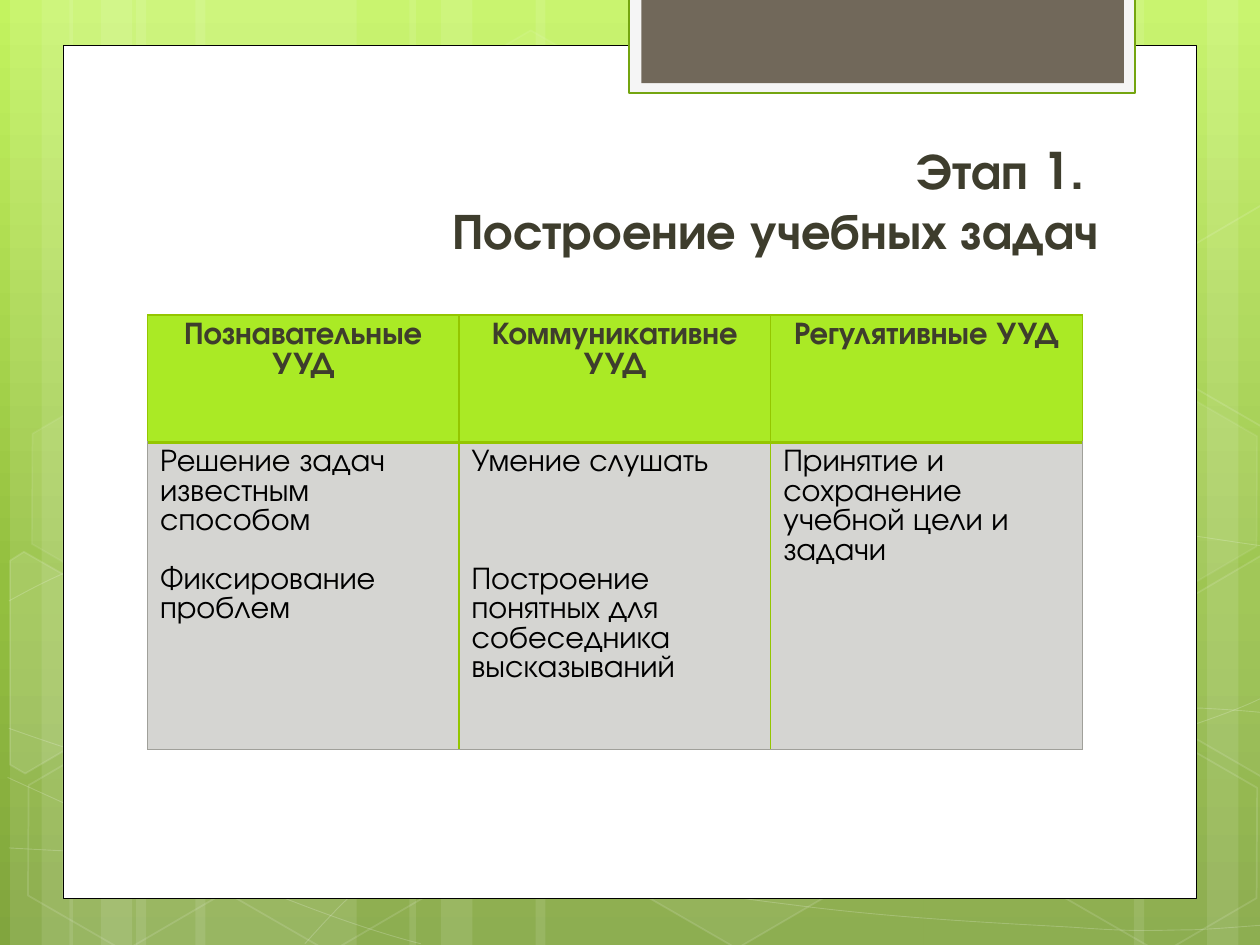
from copy import deepcopy

from lxml import etree
from pptx import Presentation
from pptx.dml.color import RGBColor
from pptx.enum.shapes import MSO_SHAPE
from pptx.enum.text import MSO_ANCHOR, MSO_AUTO_SIZE, PP_ALIGN
from pptx.oxml.ns import qn
from pptx.util import Inches, Pt

RECT, HEXAGON = MSO_SHAPE.RECTANGLE, MSO_SHAPE.HEXAGON
LEFT, CENTER, RIGHT = PP_ALIGN.LEFT, PP_ALIGN.CENTER, PP_ALIGN.RIGHT
FONT = "TeX Gyre Adventor"
WHITE, GREEN, GREY = "FFFFFF", "94C600", "A0A09A"
LINE_PITCH = 16.8

STRIPES = [(1.08, 1.75), (0.08, 0.5), (0.33, 0.83), (1.55, 1.75), (0.55, 0.5), (0.8, 0.83),
           (7.33, 1.75), (9.58, 0.5), (9, 0.83), (4.25, 3.08), (3.25, 0.5), (3.5, 0.83)]
WAVES = [
    [(0.07, 6.73), (0.61, 6.76), (1.15, 6.79), (1.9, 6.78), (2.65, 6.77), (3.58, 6.75),
     (4.58, 6.65), (5.58, 6.55), (7, 6.36), (7.92, 6.17), (8.83, 5.98), (9.77, 5.68),
     (10.07, 5.51)],
    [(0.07, 4.77), (0.36, 4.61), (0.65, 4.46), (1.21, 4.31), (1.78, 4.16), (2.59, 3.94),
     (3.47, 3.87), (4.36, 3.8), (5.44, 3.79), (6.54, 3.87), (7.64, 3.95), (9.47, 4.26),
     (10.07, 4.34)],
    [(0.06, 6.17), (1.27, 6.72), (2.47, 7.27), (3.34, 7.49)],
    [(0.07, 5.78), (0.38, 5.89), (0.7, 6), (1.28, 6.16), (1.86, 6.31), (2.73, 6.56),
     (3.57, 6.73), (4.4, 6.9), (5.45, 7.08), (6.28, 7.18), (7.11, 7.29), (8, 7.33),
     (8.53, 7.36), (9.05, 7.4), (9.19, 7.38), (9.45, 7.38), (9.71, 7.37), (9.89, 7.35),
     (10.07, 7.34)],
    [(2.42, 7.49), (2.6, 7.29), (2.78, 7.09), (3.02, 6.91), (3.26, 6.73), (3.6, 6.53),
     (3.88, 6.39), (4.16, 6.25), (4.33, 6.19), (4.7, 6.09), (5.06, 5.99), (5.73, 5.85),
     (6.08, 5.78), (6.44, 5.71), (6.49, 5.71), (6.8, 5.69), (7.11, 5.66), (7.6, 5.63),
     (7.94, 5.62), (8.29, 5.61), (8.86, 5.62), (8.86, 5.62), (9.08, 5.62), (9.31, 5.62),
     (9.53, 5.62), (9.71, 5.63), (9.88, 5.64), (10.06, 5.66)],
]
HEXAGONS = [(3.34, 0.36, 4, 8), (4.97, 5.89, 6, 12), (0.11, 5.91, 0, 12), (0.14, 3.12, 7, 8),
            (1.74, 5.92, 0, 12), (7.53, 4.53, 10, 12), (8.34, 5.93, 0, 12), (8.34, 3.14, 7, 8)]
CUT_HEXAGONS = [
    ([(0.08, 4.45), (0.19, 4.38), (0.96, 4.82), (0.95, 5.7), (0.2, 6.14), (0.08, 6.07)], 10),
    ([(9.26, 4.85), (10.01, 4.41), (10.09, 4.46), (10.09, 6.13), (10.02, 6.17), (9.26, 5.73)], 4),
    ([(9.26, 2.07), (10.01, 1.63), (10.1, 1.68), (10.09, 3.35), (10.02, 3.39), (9.26, 2.95)], 0),
]
HEADERS = ["Познавательные УУД", "Коммуникативне УУД", "Регулятивные УУД"]
SKILLS = [
    (["Решение задач известным способом", "Фиксирование проблем"], 1),
    (["Умение слушать", "Построение понятных для собеседника высказываний"], 3),
    (["Принятие и сохранение учебной цели и задачи"], 0),
]


def color(value):
    """Turn a hex string into a colour."""
    return RGBColor.from_string(value)


def paint(fill, value, opacity=100):
    """Give a fill a solid colour with an opacity in percent."""
    if not opacity:
        fill.background()
        return
    fill.solid()
    fill.fore_color.rgb = color(value)
    if opacity < 100:
        solid = fill._xPr.find(qn("a:solidFill"))
        etree.SubElement(solid[0], qn("a:alpha"), val=str(opacity * 1000))


def style(shape, fill, opacity=100, line=None, width=1, line_opacity=100):
    """Set the fill and outline of a shape and drop its shadow."""
    shape.shadow.inherit = False
    paint(shape.fill, fill, opacity)
    paint(shape.line.fill, line, line_opacity if line else 0)
    if line:
        shape.line.width = Pt(width)


def add_box(slide, kind, left, top, width, height):
    """Add a preset shape at a place in inches."""
    return slide.shapes.add_shape(kind, Inches(left), Inches(top), Inches(width), Inches(height))


def add_outline(slide, points, close):
    """Add a freeform through points in inches."""
    start, *rest = [(Inches(x), Inches(y)) for x, y in points]
    builder = slide.shapes.build_freeform(*start)
    builder.add_line_segments(rest, close=close)
    return builder.convert_to_shape()


def add_curve(slide, knots):
    """Add a chain of cubic curves, three knots to each after the start."""
    curve = add_outline(slide, knots, False)
    outline = next(curve._element.iter(qn("a:path")))
    lines = outline.findall(qn("a:lnTo"))
    for first in range(0, len(lines), 3):
        cubic = etree.SubElement(outline, qn("a:cubicBezTo"))
        for line in lines[first:first + 3]:
            cubic.append(line[0])
            outline.remove(line)
    return curve


def add_backdrop(slide):
    """Draw the green gradient with its stripes, waves and hexagons."""
    fill = slide.background.fill
    fill.gradient()
    fill.gradient_angle = 270
    stop_list = next(slide._element.iter(qn("a:gsLst")))
    stop_list.append(deepcopy(stop_list[-1]))
    for stop, position, value in zip(fill.gradient_stops, (0, 0.62, 1), ("C3F35F", "93BF3F", "81A53E")):
        stop.position = position
        stop.color.rgb = color(value)
    for left, width in STRIPES:
        style(add_box(slide, RECT, left, 0, width, 7.5), WHITE, 10)
    for knots in WAVES:
        style(add_curve(slide, knots), WHITE, 0, WHITE, 0.5, 20)
    for left, top, opacity, line_opacity in HEXAGONS:
        hexagon = add_box(slide, HEXAGON, left, top, 1.75, 1.52)
        hexagon.rotation = 30
        hexagon.adjustments[0] = 0.285
        style(hexagon, WHITE, opacity, WHITE, 1, line_opacity)
    for points, opacity in CUT_HEXAGONS:
        style(add_outline(slide, points, True), WHITE, opacity, WHITE, 1, 12)


def add_panel(slide):
    """Draw the white page and the tab at its top edge."""
    style(add_box(slide, RECT, 0.5, 0.36, 9, 6.77), WHITE, line="000000", width=0.5)
    style(add_box(slide, RECT, 4.99, -0.02, 4.02, 0.76), "F5F5F5", line="74A510", width=1.25)
    style(add_box(slide, RECT, 5.09, -0.02, 3.83, 0.68), "71685A")


def format_paragraph(paragraph, size, value, bold, align):
    """Set alignment and font of a paragraph."""
    paragraph.alignment = align
    font = paragraph.font
    font.name, font.size, font.bold = FONT, Pt(size), bold
    font.color.rgb = color(value)


def place_title(slide, left, top, width, height):
    """Put the title in its box, in front of the page."""
    title = slide.shapes.title
    slide.shapes._spTree.append(title._element)
    title.left, title.top, title.width, title.height = map(Inches, (left, top, width, height))
    frame = title.text_frame
    frame.text = "Этап 1. \vПостроение учебных задач"
    frame.auto_size = MSO_AUTO_SIZE.NONE
    frame.vertical_anchor = MSO_ANCHOR.BOTTOM
    format_paragraph(frame.paragraphs[0], 28.8, "3E3D2D", True, RIGHT)


def fill_cell(cell, texts, gap, value, bold, align):
    """Write paragraphs into a cell, a number of lines apart."""
    cell.text = "\n".join(texts)
    for index, paragraph in enumerate(cell.text_frame.paragraphs):
        paragraph.line_spacing = Pt(LINE_PITCH)
        if index:
            paragraph.space_before = Pt(gap * LINE_PITCH)
        format_paragraph(paragraph, 18, value, bold, align)


def set_borders(cell, **borders):
    """Draw the cell edges L, R, T and B from (colour, width) pairs."""
    properties = cell._tc.get_or_add_tcPr()
    for index, side in enumerate("LRTB"):
        value, width = borders[side]
        line = etree.Element(qn(f"a:ln{side}"), w=str(Pt(width)))
        solid = etree.SubElement(line, qn("a:solidFill"))
        etree.SubElement(solid, qn("a:srgbClr"), val=value)
        properties.insert(index, line)


def add_skills_table(slide, left, top, width, row_heights):
    """Build the table of learning skills."""
    table = slide.shapes.add_table(2, len(HEADERS), Inches(left), Inches(top), Inches(width),
                                   Inches(sum(row_heights))).table
    for row, height in zip(table.rows, row_heights):
        row.height = Inches(height)
    inner, rule = (GREEN, 1), (GREEN, 2)
    last = len(HEADERS) - 1
    for column, (header, (texts, gap)) in enumerate(zip(HEADERS, SKILLS)):
        head, body = table.cell(0, column), table.cell(1, column)
        fill_cell(head, [header], 0, "3E3D2D", True, CENTER)
        fill_cell(body, texts, gap, "000000", False, LEFT)
        paint(head.fill, "AAEA25")
        paint(body.fill, "2E2E22", 20)
        for cell, outer, upper, lower in ((head, (GREEN, 0.5), inner, rule),
                                          (body, (GREY, 0.5), rule, (GREY, 0.5))):
            set_borders(cell, L=inner if column else outer, R=inner if column < last else outer,
                        T=upper, B=lower)


def main():
    """Build the slide and save it."""
    deck = Presentation()
    deck.slide_width, deck.slide_height = Inches(10), Inches(7.5)
    slide = deck.slides.add_slide(deck.slide_layouts[5])
    add_backdrop(slide)
    add_panel(slide)
    place_title(slide, 1.14, 1.12, 7.68, 0.99)
    add_skills_table(slide, 1.17, 2.5, 7.42, (1.01, 2.44))
    deck.save("out.pptx")


if __name__ == "__main__":
    main()
